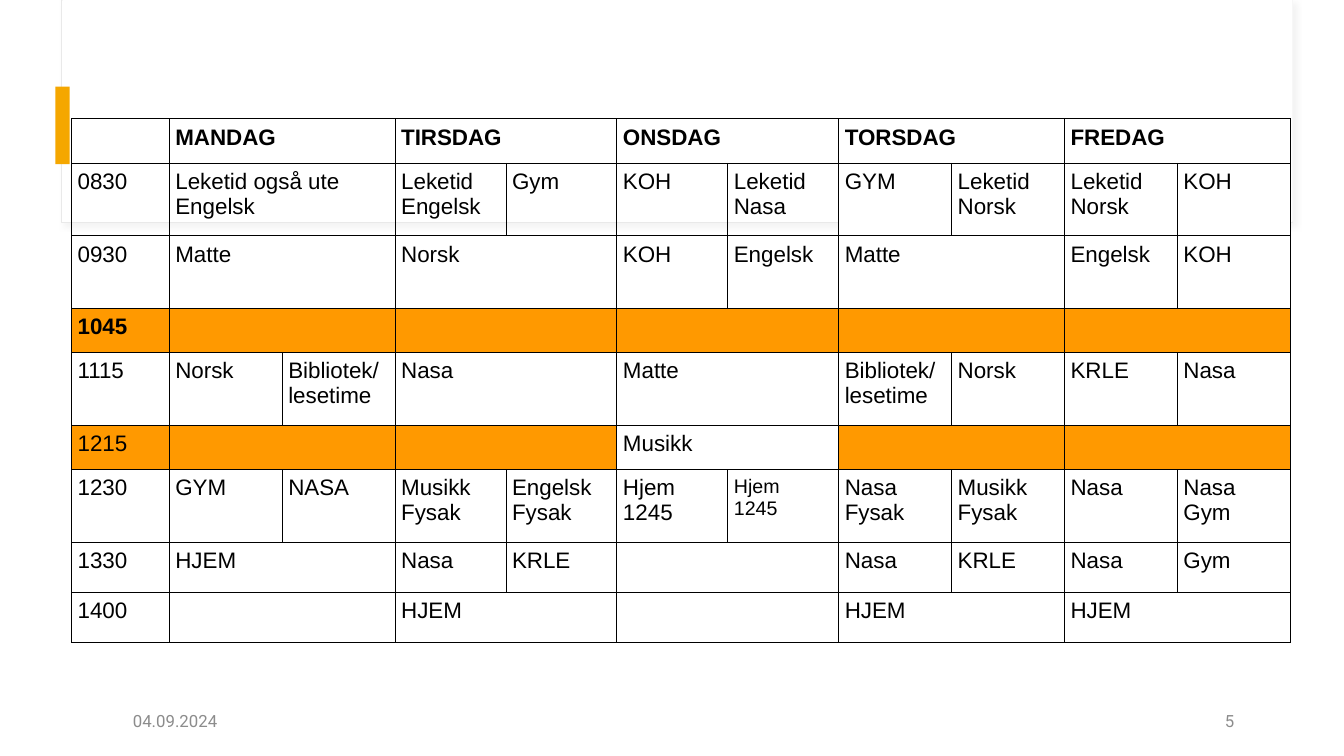
from lxml import etree
from pptx import Presentation
from pptx.dml import color
from pptx.enum import shapes, text
from pptx.oxml import ns
from pptx.util import Inches, Pt

ORANGE = "FF9900"
WHITE = "FFFFFF"
TIMETABLE = [
    ("", ["MANDAG", "TIRSDAG", "ONSDAG", "TORSDAG", "FREDAG"]),
    ("0830", ["Leketid også ute\nEngelsk", ("Leketid\nEngelsk", "Gym"), ("KOH", "Leketid\nNasa"),
              ("GYM", "Leketid\nNorsk"), ("Leketid\nNorsk", "KOH")]),
    ("0930", ["Matte", "Norsk", ("KOH", "Engelsk"), "Matte", ("Engelsk", "KOH")]),
    ("1045", [""] * 5),
    ("1115", [("Norsk", "Bibliotek/ lesetime"), "Nasa", "Matte",
              ("Bibliotek/ lesetime", "Norsk"), ("KRLE", "Nasa")]),
    ("1215", ["", "", "Musikk", "", ""]),
    ("1230", [("GYM", "NASA"), ("Musikk\nFysak", "Engelsk\nFysak"), ("Hjem\v1245", "Hjem\v1245"),
              ("Nasa\nFysak", "Musikk\nFysak"), ("Nasa", "Nasa\nGym")]),
    ("1330", ["HJEM", ("Nasa", "KRLE"), "", ("Nasa", "KRLE"), ("Nasa", "Gym")]),
    ("1400", ["", "HJEM", "", "HJEM", "HJEM"]),
]
BREAKS = ("1045", "1215")
ROW_HEIGHTS = [0.44, 0.72, 0.72, 0.44, 0.72, 0.44, 0.72, 0.5, 0.5]
TIME_WIDTH = 0.97
LESSON_WIDTHS = [1.12, 1.1, 1.1, 1.12, 1.12]
SMALL_CELL = (6, 6)


def rgb(value):
    return color.RGBColor.from_string(value)


def style_text(frame, size, font, shade, bold=False):
    for para in frame.paragraphs:
        for span in para.runs:
            span.font.size = Pt(size)
            span.font.name = font
            span.font.bold = bold
            span.font.color.rgb = rgb(shade)


def add_block(page, box, fill, line=None):
    block = page.shapes.add_shape(shapes.MSO_SHAPE.RECTANGLE, *map(Inches, box))
    block.shadow.inherit = False
    block.fill.solid()
    block.fill.fore_color.rgb = rgb(fill)
    if line:
        block.line.color.rgb = rgb(line)
        block.line.width = Pt(0.75)
    else:
        block.line.fill.background()
    return block


def add_shadow(block):
    effects = block._element.spPr.find(ns.qn("a:effectLst"))
    shadow = etree.SubElement(effects, ns.qn("a:outerShdw"), blurRad=str(Pt(4)),
                              dist=str(Pt(3)), dir="2700000", rotWithShape="0")
    shade = etree.SubElement(shadow, ns.qn("a:srgbClr"), val="D9D9D9")
    etree.SubElement(shade, ns.qn("a:alpha"), val="30000")


def add_header_panel(page, box):
    left, top, width, height = box
    add_shadow(add_block(page, box, WHITE, "E9E9E9"))
    add_block(page, (left + 0.01, top, width - 0.01, height - 0.01), WHITE)
    add_block(page, (left - 0.06, top + 0.86, 0.14, 0.77), "F5A700")


def add_borders(cell):
    properties = cell._tc.get_or_add_tcPr()
    for place, side in enumerate(("lnL", "lnR", "lnT", "lnB")):
        line = etree.Element(ns.qn(f"a:{side}"), w=str(Pt(0.75)))
        fill = etree.SubElement(line, ns.qn("a:solidFill"))
        etree.SubElement(fill, ns.qn("a:srgbClr"), val="000000")
        properties.insert(place, line)


def format_cell(cell, fill):
    cell.margin_left = cell.margin_right = Inches(0.06)
    cell.margin_top = cell.margin_bottom = Inches(0.06)
    if fill:
        cell.fill.solid()
        cell.fill.fore_color.rgb = rgb(fill)
    else:
        cell.fill.background()
    add_borders(cell)


def cell_fill(row, column, time, days):
    if time in BREAKS:
        lesson = days[(column - 1) // 2] if column else ""
        return WHITE if lesson else ORANGE
    return WHITE if row and column >= 7 else None


def write_cell(cell, wording, row, column, bold):
    cell.text_frame.text = wording
    size = 14 if (row, column) == SMALL_CELL else 16
    style_text(cell.text_frame, size, "Arial", "000000", bold)


def add_timetable(page, box):
    widths = [TIME_WIDTH] + [width for width in LESSON_WIDTHS for half in range(2)]
    table = page.shapes.add_table(len(TIMETABLE), len(widths), *map(Inches, box)).table
    table.first_row = table.horz_banding = False
    for column, width in enumerate(widths):
        table.columns[column].width = Inches(width)
    for row, (time, days) in enumerate(TIMETABLE):
        table.rows[row].height = Inches(ROW_HEIGHTS[row])
        bold = row == 0 or time == "1045"
        for column in range(len(widths)):
            format_cell(table.cell(row, column), cell_fill(row, column, time, days))
        write_cell(table.cell(row, 0), time, row, 0, bold)
        for day, lessons in enumerate(days):
            first = 1 + 2 * day
            if isinstance(lessons, str):
                table.cell(row, first).merge(table.cell(row, first + 1))
                lessons = (lessons,)
            for offset, lesson in enumerate(lessons):
                write_cell(table.cell(row, first + offset), lesson, row, first + offset, bold)


def add_footer(page, box):
    left, top, width, height = box
    part_width = 3
    parts = [("04.09.2024", left, text.PP_ALIGN.LEFT),
             ("5", left + width - part_width, text.PP_ALIGN.RIGHT)]
    for wording, start, alignment in parts:
        frame = page.shapes.add_textbox(*map(Inches, (start, top, part_width, height))).text_frame
        frame.word_wrap = True
        frame.vertical_anchor = text.MSO_ANCHOR.MIDDLE
        frame.text = wording
        frame.paragraphs[0].alignment = alignment
        style_text(frame, 12, "Roboto", "8C8C8C")


def main():
    deck = Presentation()
    deck.slide_width, deck.slide_height = Inches(13.33), Inches(7.5)
    page = deck.slides.add_slide(deck.slide_layouts[6])
    add_header_panel(page, (0.61, 0, 12.21, 2.21))
    add_footer(page, (1.22, 6.95, 11.12, 0.4))
    add_timetable(page, (0.71, 1.18, 12.09, 5.22))
    deck.save("out.pptx")


if __name__ == "__main__":
    main()
